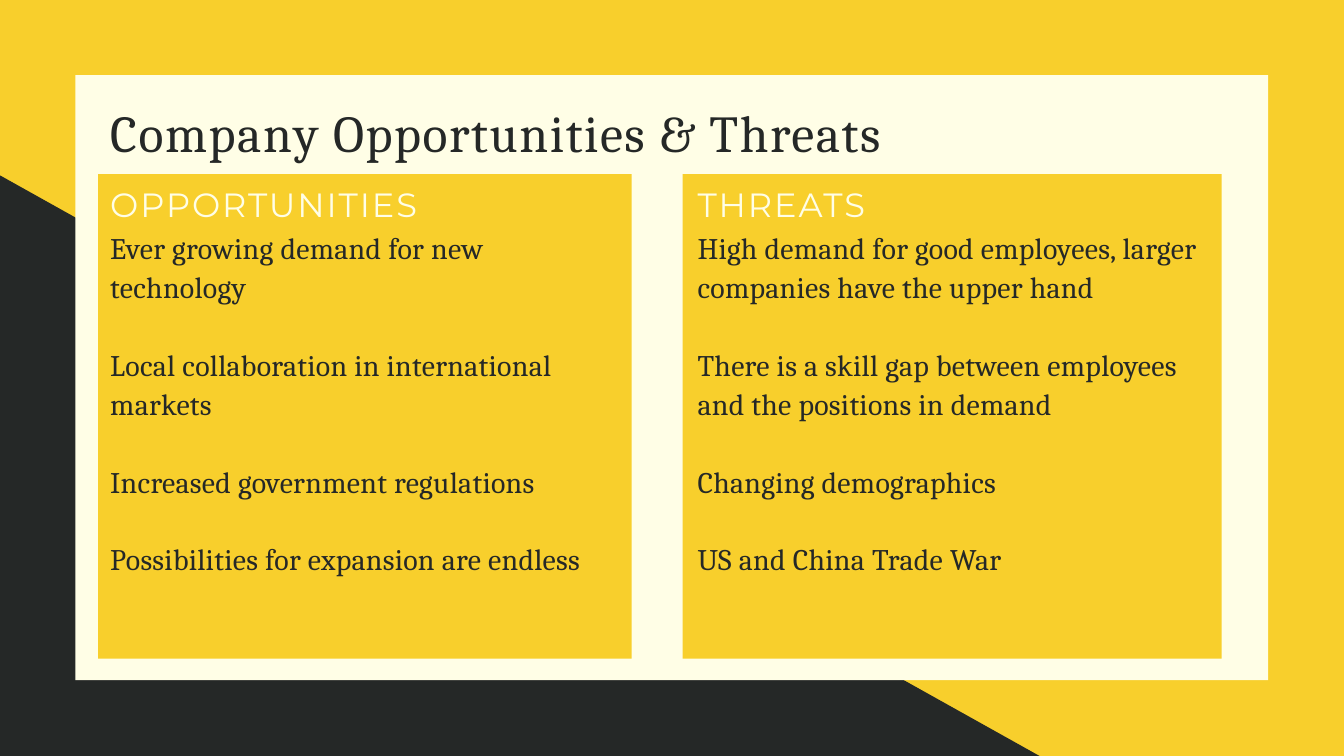
from lxml.etree import SubElement
from pptx import Presentation
from pptx.dml.color import RGBColor
from pptx.enum.shapes import MSO_SHAPE
from pptx.enum.text import MSO_ANCHOR, MSO_AUTO_SIZE, PP_ALIGN
from pptx.oxml.ns import qn
from pptx.util import Inches, Pt

WIDTH, HEIGHT = 20, 11.25
YELLOW, DARK, CREAM = "F8CF2C", "252827", "FFFEE6"
COMPARISON_LAYOUT = 4

TITLE_STYLE = {"font": "Cambria", "size": 55.5, "color": DARK, "tracking": 1.7, "line": 61, "gap": 0}
HEADING_STYLE = {"font": "Montserrat", "size": 36, "color": CREAM, "tracking": 2.1, "line": 46.8, "gap": 0}
POINT_STYLE = {"font": "Cambria", "size": 32, "color": DARK, "tracking": 0.3, "line": 41.6, "gap": 41.6}

PANEL_TOP, PANEL_HEIGHT = 2.59, 7.21
HEADING_TOP, POINTS_TOP = 2.69, 3.38

# Panel left, panel width, text left, text width, heading, points
COLUMNS = [
    (1.46, 7.94, 1.64, 7.45, "OPPORTUNITIES", [
        "Ever growing demand for new technology",
        "Local collaboration in international markets",
        "Increased government regulations",
        "Possibilities for expansion are endless",
    ]),
    (10.16, 8.02, 10.38, 7.58, "THREATS", [
        "High demand for good employees, larger companies have the upper hand",
        "There is a skill gap between employees and the positions in demand",
        "Changing demographics",
        "US and China Trade War",
    ]),
]


def rgb(hex_color):
    return RGBColor.from_string(hex_color)


def add_panel(slide, box, color, preset=MSO_SHAPE.RECTANGLE):
    panel = slide.shapes.add_shape(preset, *map(Inches, box))
    panel.shadow.inherit = False
    panel.fill.solid()
    panel.fill.fore_color.rgb = rgb(color)
    panel.line.fill.background()


def set_attributes(target, values):
    for name, value in values.items():
        setattr(target, name, value)


def write_paragraph(paragraph, text, style, space_before):
    set_attributes(paragraph, {
        "alignment": PP_ALIGN.LEFT,
        "line_spacing": Pt(style["line"]),
        "space_before": Pt(space_before),
        "space_after": Pt(0),
    })
    properties = paragraph._p.get_or_add_pPr()
    properties.set("marL", "0")
    properties.set("indent", "0")
    SubElement(properties, qn("a:buNone"))

    run = paragraph.add_run()
    run.text = text
    set_attributes(run.font, {"name": style["font"], "size": Pt(style["size"]), "bold": False})
    run.font.color.rgb = rgb(style["color"])
    run.font._element.set("spc", str(round(style["tracking"] * 100)))


def fill_placeholder(slide, index, box, lines, style):
    """Place the placeholder above the panels and write one paragraph per line."""
    placeholder = slide.placeholders[index]
    slide.shapes._spTree.append(placeholder._element)
    set_attributes(placeholder, dict(zip(("left", "top", "width", "height"), map(Inches, box))))

    frame = placeholder.text_frame
    set_attributes(frame, {
        "margin_left": 0, "margin_top": 0, "margin_right": 0, "margin_bottom": 0,
        "word_wrap": True,
        "auto_size": MSO_AUTO_SIZE.NONE,
        "vertical_anchor": MSO_ANCHOR.TOP,
    })
    for number, line in enumerate(lines):
        paragraph = frame.add_paragraph() if number else frame.paragraphs[0]
        write_paragraph(paragraph, line, style, style["gap"] if number else 0)


def add_backdrop(slide):
    slide.background.fill.solid()
    slide.background.fill.fore_color.rgb = rgb(YELLOW)
    wedge_top = 2.61
    add_panel(slide, (0, wedge_top, 15.47, HEIGHT - wedge_top), DARK, MSO_SHAPE.RIGHT_TRIANGLE)
    add_panel(slide, (1.12, 1.12, 17.75, 9), CREAM)


def add_column(slide, number, column):
    panel_left, panel_width, text_left, text_width, heading, points = column
    add_panel(slide, (panel_left, PANEL_TOP, panel_width, PANEL_HEIGHT), YELLOW)
    heading_index = 1 + 2 * number
    fill_placeholder(slide, heading_index, (text_left, HEADING_TOP, text_width, 0.63),
                     [heading], HEADING_STYLE)
    fill_placeholder(slide, heading_index + 1, (text_left, POINTS_TOP, text_width, 6.28),
                     points, POINT_STYLE)


def main():
    deck = Presentation()
    deck.slide_width, deck.slide_height = Inches(WIDTH), Inches(HEIGHT)
    slide = deck.slides.add_slide(deck.slide_layouts[COMPARISON_LAYOUT])
    add_backdrop(slide)
    fill_placeholder(slide, 0, (1.64, 1.58, 12.87, 0.87),
                     ["Company Opportunities & Threats"], TITLE_STYLE)
    for number, column in enumerate(COLUMNS):
        add_column(slide, number, column)
    deck.save("out.pptx")


if __name__ == "__main__":
    main()
